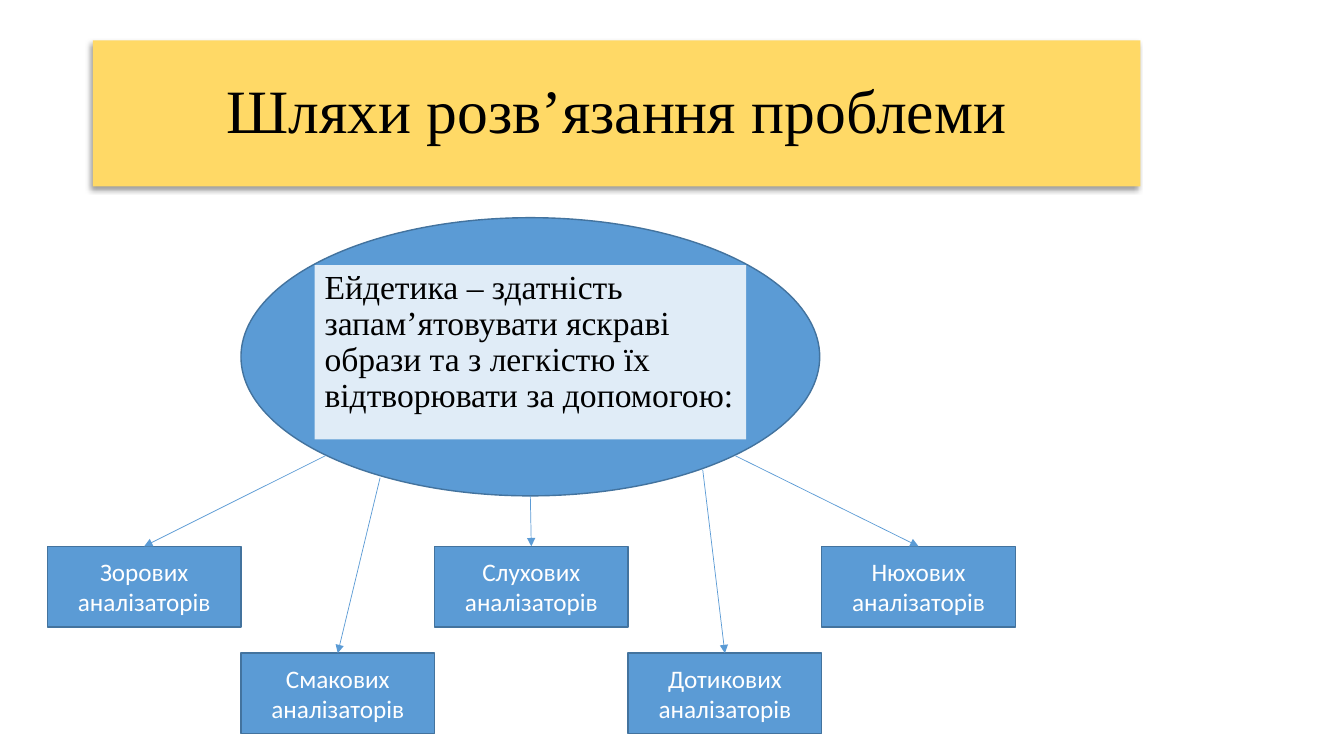
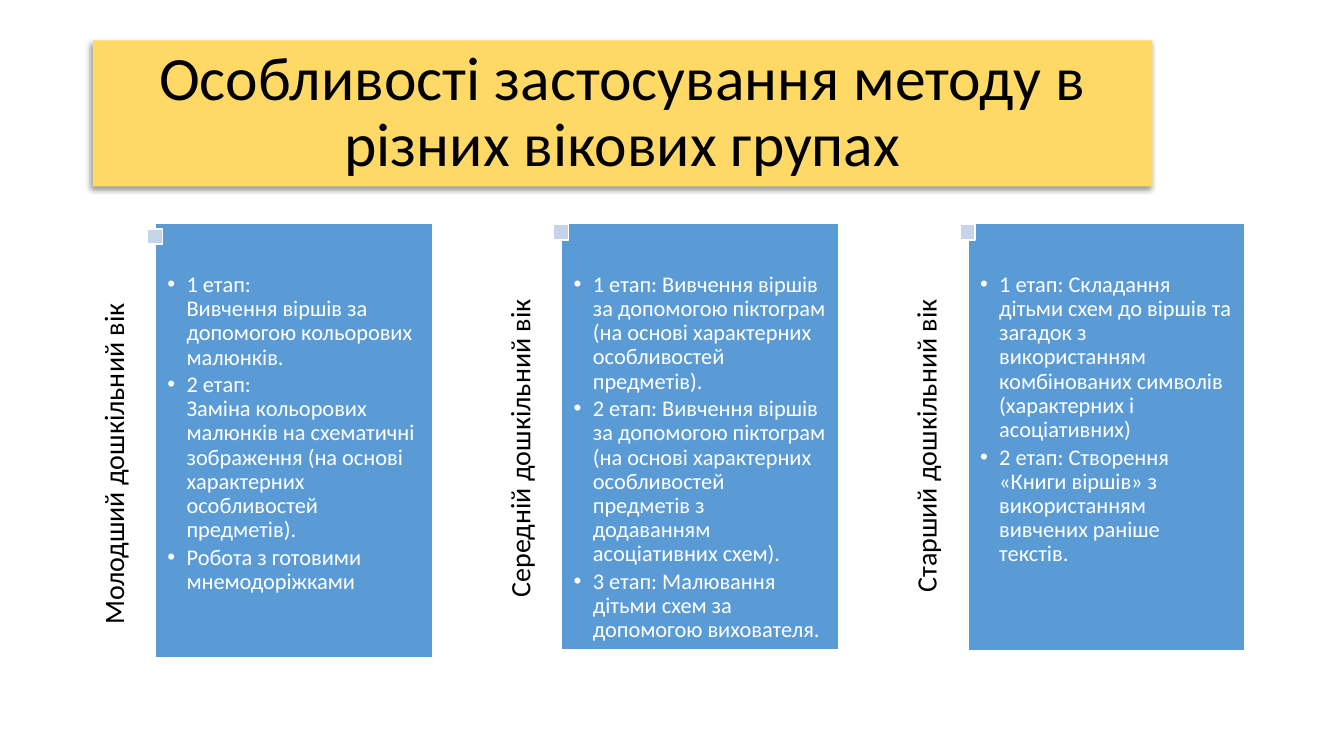
from copy import deepcopy
from lxml.etree import SubElement as Sub
from pptx import Presentation
from pptx.dml.color import RGBColor as RGB
from pptx.enum.shapes import MSO_CONNECTOR as Conn, MSO_SHAPE as Form
from pptx.enum.text import MSO_ANCHOR as Anchor, MSO_AUTO_SIZE as Fit, PP_ALIGN as Align
from pptx.oxml.ns import qn
from pptx.util import Inches, Pt

BLUE, EDGE, GOLD, PALE = "5B9BD5", "43739E", "FFD966", "C4D5EB"
WHITE, BLACK = "FFFFFF", "000000"
SANS, SERIF = "Calibri", "Times New Roman"

TITLE = {"size": 44, "color": BLACK, "align": Align.CENTER, "leading": 0.9}
LEAD = {"size": 24, "color": BLACK, "face": SERIF, "leading": 0.9}
NODE = {"size": 18, "color": WHITE, "align": Align.CENTER}
SIDE = {"size": 20, "color": BLACK, "align": Align.RIGHT, "leading": 0.9}
LIST = {"size": 16, "color": WHITE, "leading": 0.9, "after": 2.4, "bullet": True}

SENSES = [
    ("Зорових", 3.23, 4.52),
    ("Смакових", 3.77, 4.74),
    ("Слухових", 5.26, 4.92),
    ("Дотикових", 6.97, 4.66),
    ("Нюхових", 7.29, 4.52),
]

AGES = [
    ("Молодший дошкільний вік", 4.10, 4.31, 2.27, [
        "1 етап:\vВивчення віршів за допомогою кольорових малюнків.",
        "2 етап:\vЗаміна кольорових малюнків на схематичні зображення "
        "(на основі характерних особливостей предметів).",
        "Робота з готовими мнемодоріжками",
    ]),
    ("Середній дошкільний вік", 4.06, 4.23, 2.23, [
        "1 етап: Вивчення віршів за допомогою піктограм "
        "(на основі характерних особливостей предметів).",
        "2 етап: Вивчення віршів за допомогою піктограм "
        "(на основі характерних особливостей предметів з додаванням асоціативних схем).",
        "3 етап: Малювання дітьми схем за допомогою вихователя.",
    ]),
    ("Старший дошкільний вік", 4.06, 4.24, 2.23, [
        "1 етап: Складання дітьми схем до віршів та загадок з використанням "
        "комбінованих символів (характерних і асоціативних)",
        "2 етап: Створення «Книги віршів» з використанням вивчених раніше текстів.",
    ]),
]


def put(item, values):
    for key, value in values.items():
        setattr(item, key, value)


def tint(form, code):
    form.solid()
    form.fore_color.rgb = RGB.from_string(code)


def place(shape, left, top, width, height):
    put(shape, {"left": Inches(left), "top": Inches(top),
                "width": Inches(width), "height": Inches(height)})


def dot(par):
    props = par._p.get_or_add_pPr()
    props.set("marL", str(Inches(0.19)))
    props.set("indent", str(-Inches(0.19)))
    Sub(props, qn("a:buFont"), typeface="Arial")
    Sub(props, qn("a:buChar"), char="•")


def write(shape, lines, style, pads=(0.1, 0.05, 0.1, 0.05), anchor=Anchor.TOP):
    frame = shape.text_frame
    sides = ("left", "top", "right", "bottom")
    put(frame, {f"margin_{side}": Inches(pad) for side, pad in zip(sides, pads)})
    put(frame, {"word_wrap": True, "auto_size": Fit.NONE, "vertical_anchor": anchor})
    frame.text = "\n".join(lines)
    for par in frame.paragraphs:
        if style.get("bullet"):
            dot(par)
        put(par, {"alignment": style.get("align", Align.LEFT),
                  "line_spacing": style.get("leading", 1.0),
                  "space_before": Pt(0),
                  "space_after": Pt(style.get("after", 0))})
        for run in par.runs:
            put(run.font, {"size": Pt(style["size"]), "name": style.get("face", SANS)})
            tint(run.font.fill, style["color"])
        for gap in par._p.findall(qn("a:br")):
            gap.append(deepcopy(par.runs[0].font._element))


def block(slide, form, box, fill, edge=None):
    shape = slide.shapes.add_shape(form, *map(Inches, box))
    shape.shadow.inherit = False
    tint(shape.fill, fill)
    if edge:
        tint(shape.line.fill, edge)
        shape.line.width = Pt(1)
    else:
        shape.line.fill.background()
    return shape


def arrow(slide, start, end):
    line = slide.shapes.add_connector(Conn.STRAIGHT, *map(Inches, start + end))
    tint(line.line.fill, BLUE)
    line.line.width = Pt(0.5)
    Sub(line.line._get_or_add_ln(), qn("a:tailEnd"), type="triangle")
    Sub(line._element.spPr, qn("a:effectLst"))


def start(deck, text, width, face):
    slide = deck.slides.add_slide(deck.slide_layouts[5])
    title = slide.shapes.title
    place(title, 0.92, 0.4, width, 1.45)
    tint(title.fill, GOLD)
    title.shadow.inherit = False
    glow = Sub(title._element.spPr.find(qn("a:effectLst")), qn("a:outerShdw"),
               blurRad=str(Pt(4)), dist=str(Pt(3)), dir="8100000", rotWithShape="0")
    Sub(Sub(glow, qn("a:srgbClr"), val=BLACK), qn("a:alpha"), val="40000")
    write(title, [text], {**TITLE, "face": face}, anchor=Anchor.MIDDLE)
    return slide


def senses(deck):
    slide = start(deck, "Шляхи розв’язання проблеми", 10.39, SERIF)
    block(slide, Form.OVAL, (2.39, 2.16, 5.74, 2.76), BLUE, EDGE)
    lead = block(slide, Form.RECTANGLE, (3.12, 2.63, 4.28, 1.73), WHITE)
    shade = lead._element.spPr.find(qn("a:solidFill"))[0]
    Sub(shade, qn("a:alpha"), val="81000")
    write(lead, ["Ейдетика – здатність запам’ятовувати яскраві образи "
                 "та з легкістю їх відтворювати за допомогою:"], LEAD)
    wide = 1.92
    for i, (name, x, y) in enumerate(SENSES):
        left, top = 0.47 + i * wide, (5.42, 6.48)[i % 2]
        node = block(slide, Form.RECTANGLE, (left, top, wide, 0.8), BLUE, EDGE)
        write(node, [f"{name} аналізаторів"], NODE, anchor=Anchor.MIDDLE)
        arrow(slide, (x, y), (left + wide / 2, top))


def ages(deck):
    slide = start(deck, "Особливості застосування методу в різних вікових групах", 10.51, SANS)
    for i, (name, mid, tall, mark, lines) in enumerate(AGES):
        left = 1.54 + i * 4.03
        side = slide.shapes.add_textbox(*map(Inches, (left - 2.13, mid, 3.71, 0.55)))
        side.rotation = 270
        write(side, [name], SIDE, (0, 0, 0.49, 0))
        panel = block(slide, Form.RECTANGLE, (left, 2.22, 2.75, tall), BLUE, WHITE)
        write(panel, lines, LIST, (0.12, 0.49, 0.12, 0.12))
        block(slide, Form.RECTANGLE, (left - 0.08, mark, 0.15, 0.15), PALE, WHITE)


def main():
    deck = Presentation()
    put(deck, {"slide_width": Inches(13.33), "slide_height": Inches(7.5)})
    senses(deck)
    ages(deck)
    deck.save("out.pptx")


if __name__ == "__main__":
    main()
